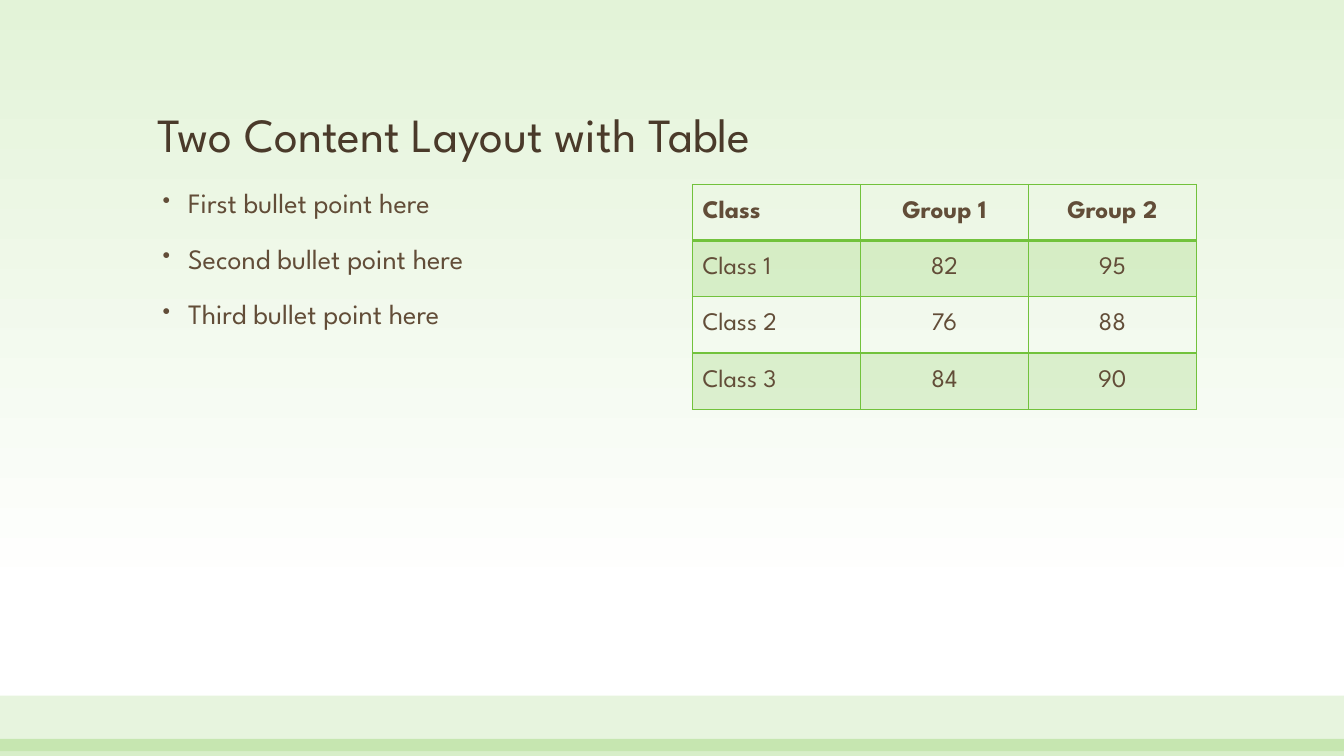
import pptx
import pptx.util
import pptx.dml.color
import pptx.enum.shapes
import pptx.enum.text
import pptx.oxml
import pptx.oxml.ns
import lxml.etree

Cm = pptx.util.Cm
Pt = pptx.util.Pt
RGBColor = pptx.dml.color.RGBColor
ALIGN = pptx.enum.text.PP_ALIGN
ANCHOR = pptx.enum.text.MSO_ANCHOR
qn = pptx.oxml.ns.qn

GREEN = RGBColor(0x72, 0xC2, 0x3C)
PALE = RGBColor(0xE3, 0xF3, 0xD8)
WHITE = RGBColor(0xFF, 0xFF, 0xFF)
DARK = RGBColor(0x4A, 0x3A, 0x2A)
BROWN = RGBColor(0x62, 0x4D, 0x38)
FACE = "League Spartan"

BULLETS = ["First bullet point here", "Second bullet point here", "Third bullet point here"]
SCORES = [
    ["Class", "Group 1", "Group 2"],
    ["Class 1", "82", "95"],
    ["Class 2", "76", "88"],
    ["Class 3", "84", "90"],
]


def set_font(para, size, color, bold=False):
    """Style a whole paragraph."""
    font = para.font
    font.name, font.size, font.bold = FACE, Pt(size), bold
    font.color.rgb = color


def tint(fill, share):
    """Fill with green at the given percentage of opacity."""
    fill.solid()
    fill.fore_color.rgb = GREEN
    color = fill._xPr.find(".//" + qn("a:srgbClr"))
    lxml.etree.SubElement(color, qn("a:alpha"), val=str(share * 1000))


def add_ground(slide):
    """Fade the background from pale green at the top to white."""
    fill = slide.background.fill
    fill.gradient()
    fill.gradient_angle = 270
    for stop, color, place in zip(fill.gradient_stops, (PALE, WHITE), (0, 0.79)):
        stop.color.rgb = color
        stop.position = place


def add_band(slide, left, top, width, height, share):
    """Add one translucent green band."""
    band = slide.shapes.add_shape(
        pptx.enum.shapes.MSO_SHAPE.RECTANGLE, left, top, width, height)
    band.shadow.inherit = False
    band.line.fill.background()
    tint(band.fill, share)


def add_title(slide, left, top, width, height):
    """Add the title, resting on the bottom of its box."""
    frame = slide.shapes.add_textbox(left, top, width, height).text_frame
    frame.word_wrap = True
    frame.vertical_anchor = ANCHOR.BOTTOM
    para = frame.paragraphs[0]
    para.text = "Two Content Layout with Table"
    para.line_spacing = 0.9
    set_font(para, 34, DARK)


def add_list(slide, left, top, width, height):
    """Add the bullet list."""
    frame = slide.shapes.add_textbox(left, top, width, height).text_frame
    frame.word_wrap = True
    for i, text in enumerate(BULLETS):
        para = frame.add_paragraph() if i else frame.paragraphs[0]
        para.text = text
        para.line_spacing = 0.9
        para.space_before = Pt(18)
        set_font(para, 20, BROWN)
        props = para._p.get_or_add_pPr()
        props.set("marL", str(Cm(0.76)))
        props.set("indent", str(Cm(-0.64)))
        mark = props.find(qn("a:defRPr"))
        for tag, key, value in (("a:buSzPct", "val", "80000"), ("a:buChar", "char", "•")):
            bullet = lxml.etree.Element(qn(tag), {key: value})
            if mark is None:
                props.append(bullet)
            else:
                mark.addprevious(bullet)


def add_edges(cell, row):
    """Draw the cell borders, with a heavier rule under the header."""
    props = cell._tc.get_or_add_tcPr()
    heavy = {0: "B", 1: "T"}.get(row)
    for i, side in enumerate("LRTB"):
        width = Pt(2 if side == heavy else 1)
        edge = lxml.etree.Element(qn("a:ln" + side), w=str(width))
        paint = lxml.etree.SubElement(edge, qn("a:solidFill"))
        lxml.etree.SubElement(paint, qn("a:srgbClr"), val=str(GREEN))
        props.insert(i, edge)


def add_scores(slide, left, top, width, height):
    """Add the table of scores, with every other row tinted."""
    rows, cols = len(SCORES), len(SCORES[0])
    table = slide.shapes.add_table(rows, cols, left, top, width, height).table
    table.first_row = table.horz_banding = False
    for r, values in enumerate(SCORES):
        for c, text in enumerate(values):
            cell = table.cell(r, c)
            cell.vertical_anchor = ANCHOR.MIDDLE
            para = cell.text_frame.paragraphs[0]
            para.text = text
            para.alignment = ALIGN.CENTER if c else ALIGN.LEFT
            set_font(para, 18, BROWN, bold=r == 0)
            if r % 2:
                tint(cell.fill, 20)
            else:
                cell.fill.background()
            add_edges(cell, r)


def main():
    """Build and save the slide."""
    deck = pptx.Presentation()
    deck.slide_width, deck.slide_height = Cm(33.87), Cm(19.05)
    slide = deck.slides.add_slide(deck.slide_layouts[6])
    add_ground(slide)
    add_band(slide, 0, Cm(17.53), deck.slide_width, Cm(1.4), 17)
    add_band(slide, 0, Cm(18.62), deck.slide_width, Cm(0.43), 28)
    add_title(slide, Cm(3.73), Cm(1.22), Cm(26.42), Cm(3.02))
    add_scores(slide, Cm(17.45), Cm(4.65), Cm(12.7), Cm(5.66))
    add_list(slide, Cm(3.73), Cm(4.65), Cm(12.7), Cm(12.07))
    deck.save("out.pptx")


if __name__ == "__main__":
    main()
